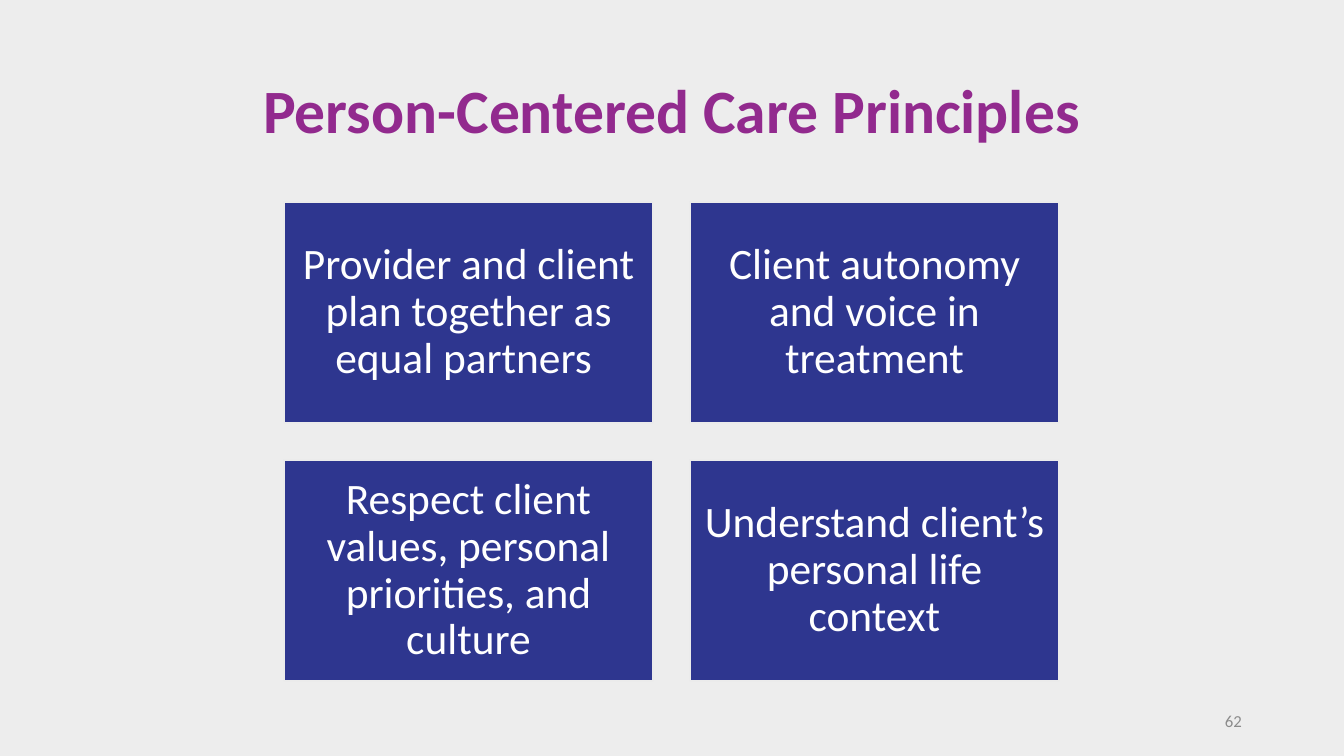
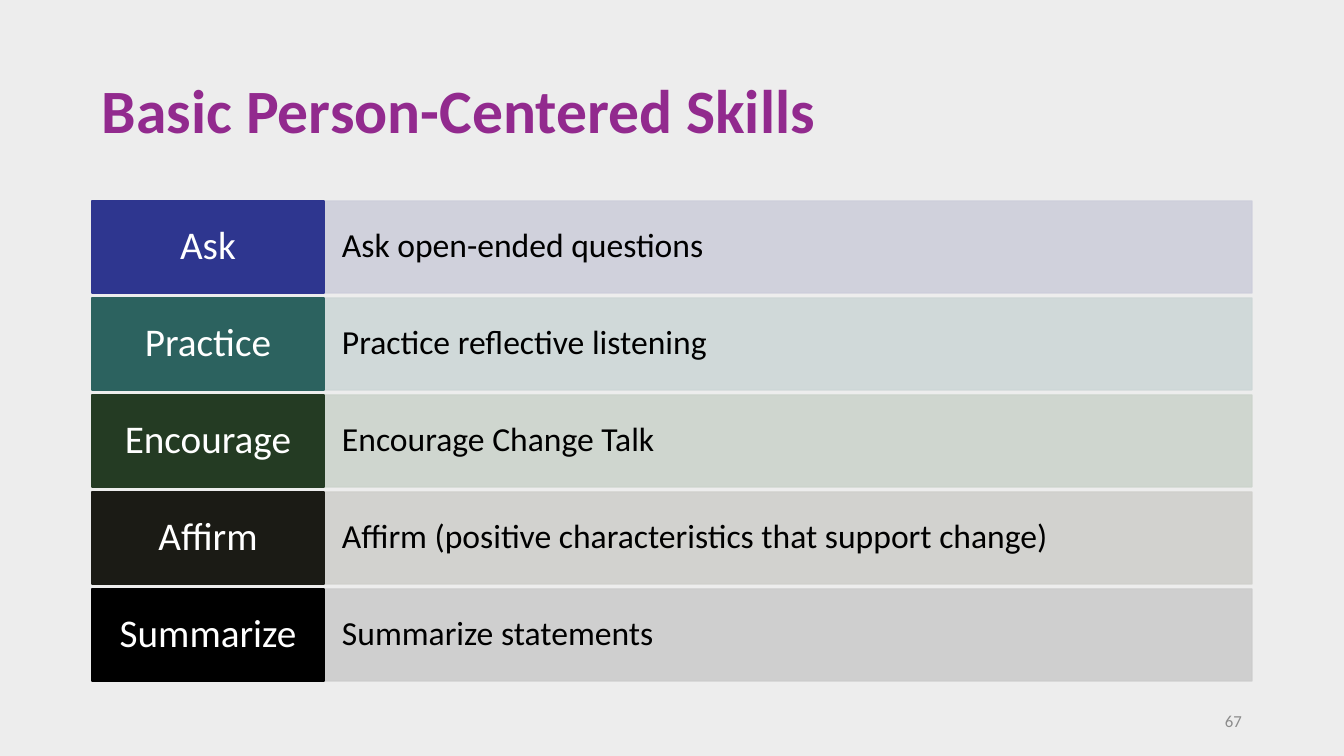
from collections import namedtuple

from lxml import etree
from pptx import Presentation
from pptx import util as u
from pptx.dml import color
from pptx.enum import shapes, text
from pptx.oxml import ns

Box = namedtuple("Box", "left top width height")

EMU_PER_PX = 914400 / 100.8
FONT = "Calibri"
COLORS = {
    "background": "EDEDED",
    "title": "922A8E",
    "tile": "2E368F",
    "tile_line": "EBEBEB",
    "light_text": "FFFFFF",
    "dark_text": "000000",
    "number": "8C8C8C",
}
TITLE_BOX = Box(92, 41, 1160, 146)
NUMBER_BOX = Box(950, 701, 302, 40)
TILES_BOX = Box(284, 202, 775, 479)
SKILLS_BOX = Box(92, 201, 1160, 480)

PRINCIPLES = [
    "Provider and client plan together as equal partners ",
    "Client autonomy and voice in treatment",
    "Respect client values, personal priorities, and culture",
    "Understand client’s personal life context",
]
SKILLS = [
    ("Ask", "Ask open-ended questions", "2E368F", "CDCEDB"),
    ("Practice", "Practice reflective listening", "2C625F", "CDD7D7"),
    ("Encourage", "Encourage Change Talk", "243B23", "CCD4CC"),
    ("Affirm", "Affirm (positive characteristics that support change)",
     "1B1B15", "D0D0CC"),
    ("Summarize", "Summarize statements", "000000", "CCCCCC"),
]


def px(length):
    return u.Emu(round(length * EMU_PER_PX))


def rgb(value):
    return color.RGBColor.from_string(value)


def write(shape, words, size, ink, align, insets=(10, 5), spacing=0.9, bold=False):
    frame = shape.text_frame
    frame.word_wrap = True
    frame.auto_size = text.MSO_AUTO_SIZE.NONE
    frame.vertical_anchor = text.MSO_ANCHOR.MIDDLE
    frame.margin_left = frame.margin_right = px(insets[0])
    frame.margin_top = frame.margin_bottom = px(insets[1])
    frame.text = words
    para = frame.paragraphs[0]
    para.alignment = align
    para.line_spacing = spacing
    para.font.name = FONT
    para.font.size = u.Pt(size)
    para.font.bold = bold
    para.font.color.rgb = rgb(ink)


def add_panel(page, box, fill, line, opacity=100):
    panel = page.shapes.add_shape(shapes.MSO_SHAPE.RECTANGLE, *map(px, box))
    panel.shadow.inherit = False
    panel.fill.solid()
    panel.fill.fore_color.rgb = rgb(fill)
    panel.line.color.rgb = rgb(line)
    panel.line.width = u.Pt(1)
    if opacity < 100:
        for tint in panel.element.spPr.iter(ns.qn("a:srgbClr")):
            etree.SubElement(tint, ns.qn("a:alpha"), val=str(opacity * 1000))
    return panel


def add_page(deck, title, align, number):
    page = deck.slides.add_slide(deck.slide_layouts.get_by_name("Title Only"))
    heading = page.shapes.title
    heading.left, heading.top, heading.width, heading.height = map(px, TITLE_BOX)
    write(heading, title, 44, COLORS["title"], align, bold=True)
    footer = page.shapes.add_textbox(*map(px, NUMBER_BOX))
    write(footer, str(number), 12, COLORS["number"], text.PP_ALIGN.RIGHT, spacing=1.0)
    return page


def add_tiles(page, box, principles, columns=2, gap=37):
    rows = -(-len(principles) // columns)
    width = (box.width - gap * (columns - 1)) // columns
    height = (box.height - gap * (rows - 1)) // rows
    for index, principle in enumerate(principles):
        row, column = divmod(index, columns)
        place = Box(box.left + column * (width + gap),
                    box.top + row * (height + gap), width, height)
        tile = add_panel(page, place, COLORS["tile"], COLORS["tile_line"])
        write(tile, principle, 31, COLORS["light_text"], text.PP_ALIGN.CENTER, (13, 13))


def add_skill_rows(page, box, skills, gap=5):
    height = (box.height - gap * (len(skills) - 1)) // len(skills)
    label_width = box.width // 5
    for index, (name, detail, dark, pale) in enumerate(skills):
        top = box.top + index * (height + gap)
        detail_box = Box(box.left + label_width, top, box.width - label_width, height)
        band = add_panel(page, detail_box, pale, pale, opacity=90)
        write(band, detail, 24, COLORS["dark_text"], text.PP_ALIGN.LEFT, (18, 23))
        label = add_panel(page, Box(box.left, top, label_width, height), dark, dark)
        write(label, name, 28, COLORS["light_text"], text.PP_ALIGN.CENTER, (12, 9))


def main():
    deck = Presentation()
    deck.slide_width, deck.slide_height = px(1344), px(756)
    backdrop = deck.slide_master.background.fill
    backdrop.solid()
    backdrop.fore_color.rgb = rgb(COLORS["background"])

    principles_page = add_page(
        deck, "Person-Centered Care Principles", text.PP_ALIGN.CENTER, 62)
    add_tiles(principles_page, TILES_BOX, PRINCIPLES)

    skills_page = add_page(
        deck, "Basic Person-Centered Skills", text.PP_ALIGN.LEFT, 67)
    add_skill_rows(skills_page, SKILLS_BOX, SKILLS)

    deck.save("out.pptx")


if __name__ == "__main__":
    main()
